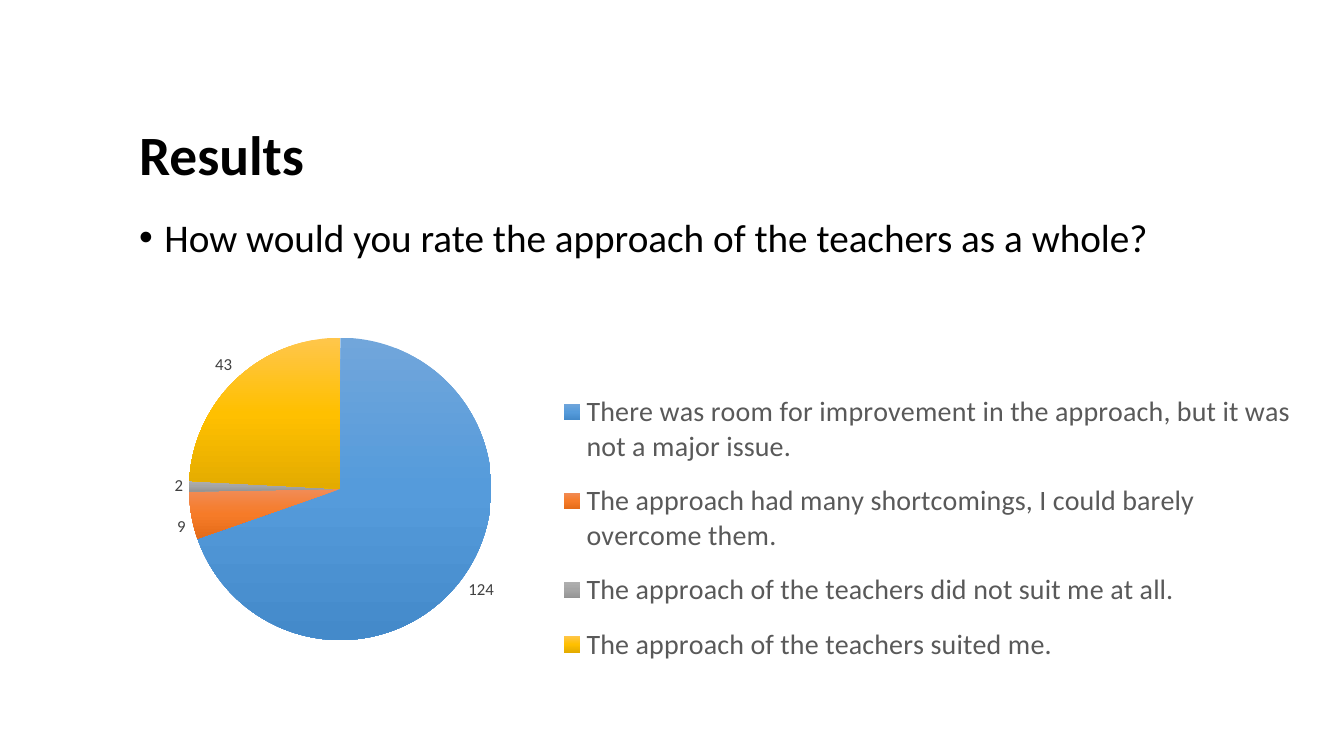
from copy import deepcopy
from dataclasses import dataclass

from lxml.etree import SubElement
from pptx import Presentation
from pptx.chart.chart import Chart
from pptx.chart.data import CategoryChartData
from pptx.dml.color import RGBColor
from pptx.enum.chart import XL_CHART_TYPE as ChartType
from pptx.enum.chart import XL_LABEL_POSITION as LabelPosition
from pptx.enum.chart import XL_LEGEND_POSITION as LegendPosition
from pptx.enum.text import MSO_ANCHOR as Anchor
from pptx.enum.text import MSO_AUTO_SIZE as AutoSize
from pptx.enum.text import PP_ALIGN as Align
from pptx.oxml import parse_xml
from pptx.oxml.ns import nsdecls, qn
from pptx.slide import Slide
from pptx.text.text import Font
from pptx.util import Cm, Pt

FONT = "Calibri"
COLOURS = {"text": "000000", "legend": "595959", "label": "404040"}


@dataclass
class Box:
    left: float
    top: float
    width: float
    height: float


@dataclass
class PlaceholderText:
    index: int
    box: Box
    text: str
    size: float
    bold: bool
    anchor: Anchor
    bullet: str = ""


@dataclass
class Answer:
    text: str
    count: int
    gradient: tuple[str, str, str]


PLACEHOLDERS = [
    PlaceholderText(0, Box(3.25, 3.05, 29.21, 1.85), "Results", 39.6, True, Anchor.MIDDLE),
    PlaceholderText(1, Box(3.25, 5.38, 30.2, 10.9),
                    "How would you rate the approach of the teachers as a whole?",
                    28, False, Anchor.TOP, "•"),
]
ANSWERS = [
    Answer("There was room for improvement in the approach, but it was not a major issue.",
           124, ("71A6DB", "559BDB", "448ACA")),
    Answer("The approach had many shortcomings, I could barely overcome them.",
           9, ("F18C57", "F67B28", "E56C19")),
    Answer("The approach of the teachers did not suit me at all.",
           2, ("AFAFAF", "A5A5A5", "939393")),
    Answer("The approach of the teachers suited me.",
           43, ("FFC64B", "FFC000", "E3AB00")),
]
CHART_BOX = Box(3.25, 7.57, 29.59, 10.44)
PLOT_AREA = Box(0.05, 0.09, 0.26, 0.73)
LEGEND_AREA = Box(0.36, 0.18, 0.64, 0.74)


def format_font(font: Font, size: float, colour: str, bold: bool = False) -> None:
    font.name = FONT
    font.size = Pt(size)
    font.bold = bold
    font.color.rgb = RGBColor.from_string(COLOURS[colour])


def fill_placeholder(slide: Slide, item: PlaceholderText) -> None:
    shape = slide.placeholders[item.index]
    box = item.box
    shape.left, shape.top = Cm(box.left), Cm(box.top)
    shape.width, shape.height = Cm(box.width), Cm(box.height)
    text_frame = shape.text_frame
    text_frame.text = item.text
    text_frame.word_wrap = True
    text_frame.auto_size = AutoSize.NONE
    text_frame.vertical_anchor = item.anchor
    paragraph = text_frame.paragraphs[0]
    paragraph.alignment = Align.LEFT
    paragraph.line_spacing = 0.9
    paragraph.space_before = Pt(0)
    if item.bullet:
        properties = paragraph._p.get_or_add_pPr()
        properties.set("marL", str(Cm(0.64)))
        properties.set("indent", str(-Cm(0.64)))
        SubElement(properties, qn("a:buFont"), typeface="Arial")
        SubElement(properties, qn("a:buChar"), char=item.bullet)
    format_font(paragraph.runs[0].font, item.size, "text", item.bold)


def place_chart_part(chart: Chart, tag: str, position: int, area: Box, target: str) -> None:
    element = chart.element.xpath(f".//{tag}")[0]
    for layout in element.findall(qn("c:layout")):
        element.remove(layout)
    element.insert(position, parse_xml(
        f'<c:layout {nsdecls("c")}><c:manualLayout>{target}'
        '<c:xMode val="edge"/><c:yMode val="edge"/>'
        f'<c:x val="{area.left}"/><c:y val="{area.top}"/>'
        f'<c:w val="{area.width}"/><c:h val="{area.height}"/>'
        '</c:manualLayout></c:layout>'))


def colour_slices(chart: Chart, answers: list[Answer]) -> None:
    points = chart.plots[0].series[0].points
    for index, answer in enumerate(answers):
        point_format = points[index].format
        point_format.line.fill.background()
        fill = point_format.fill
        fill.gradient()
        fill.gradient_angle = 270
        stop_list = chart.element.xpath(".//c:dPt//a:gsLst")[index]
        stop_list.insert(1, deepcopy(stop_list[0]))
        for stop, position, colour in zip(fill.gradient_stops, (0, 0.5, 1), answer.gradient):
            stop.position = position
            stop.color.rgb = RGBColor.from_string(colour)


def add_answer_chart(slide: Slide, box: Box, answers: list[Answer]) -> None:
    data = CategoryChartData()
    data.categories = [answer.text for answer in answers]
    data.add_series("Series 1", [answer.count for answer in answers])
    chart = slide.shapes.add_chart(
        ChartType.PIE, Cm(box.left), Cm(box.top), Cm(box.width), Cm(box.height), data).chart
    format_font(chart.font, 10, "text")
    chart.has_title = False
    chart.has_legend = True
    chart.legend.position = LegendPosition.RIGHT
    chart.legend.include_in_layout = False
    format_font(chart.legend.font, 20, "legend")
    plot = chart.plots[0]
    plot.vary_by_categories = True
    labels = plot.series[0].data_labels
    labels.show_value = True
    labels.position = LabelPosition.OUTSIDE_END
    format_font(labels.font, 12, "label")
    colour_slices(chart, answers)
    place_chart_part(chart, "c:plotArea", 0, PLOT_AREA, '<c:layoutTarget val="inner"/>')
    place_chart_part(chart, "c:legend", 1, LEGEND_AREA, "")


def main() -> None:
    presentation = Presentation()
    presentation.slide_width = Cm(33.87)
    presentation.slide_height = Cm(19.05)
    slide = presentation.slides.add_slide(presentation.slide_layouts[1])
    for item in PLACEHOLDERS:
        fill_placeholder(slide, item)
    add_answer_chart(slide, CHART_BOX, ANSWERS)
    presentation.save("out.pptx")


if __name__ == "__main__":
    main()
